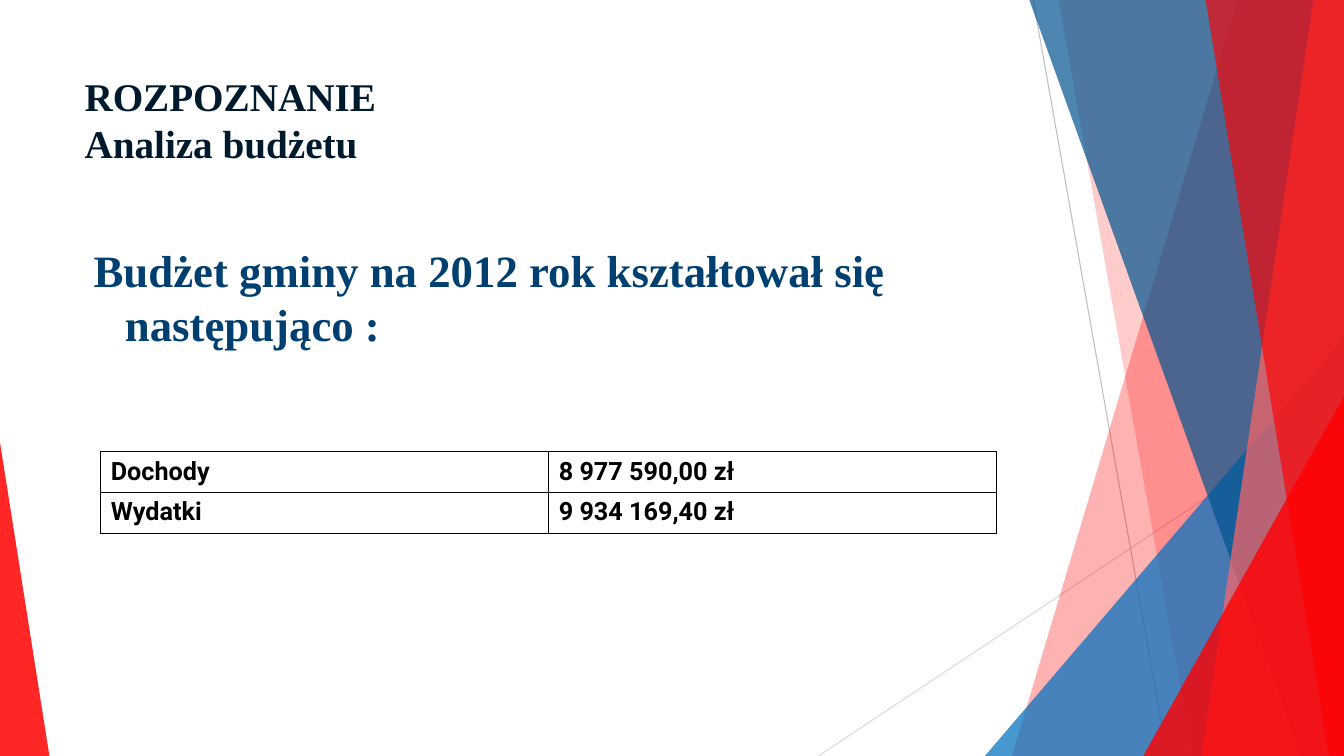
"""Build the municipal budget analysis slide."""
from lxml import etree
from pptx import Presentation
from pptx.dml.color import RGBColor
from pptx.enum.shapes import MSO_CONNECTOR, MSO_SHAPE
from pptx.enum.text import MSO_ANCHOR
from pptx.oxml.ns import qn
from pptx.util import Pt

STRAIGHT = MSO_CONNECTOR.STRAIGHT
TRIANGLE = MSO_SHAPE.ISOSCELES_TRIANGLE
TOP = MSO_ANCHOR.TOP
WIDTH, HEIGHT = 960, 540
BLEED = -0.6
RED, BLACK = "FF0000", "000000"
SERIF, SANS = "Times New Roman", "Roboto"


def color(code):
    return RGBColor.from_string(code)


class BudgetSlide:
    def __init__(self, slide):
        self.slide = slide
        self.shapes = slide.shapes

    def style_text(self, frame, text, size, face, code):
        paragraph = frame.paragraphs[0]
        paragraph.text = text
        look = {"size": Pt(size), "name": face, "bold": True}
        for run in paragraph.runs:
            for key, value in look.items():
                setattr(run.font, key, value)
            run.font.color.rgb = color(code)
        return paragraph

    def paint(self, shape, code, opacity):
        shape.shadow.inherit = False
        shape.fill.solid()
        shape.fill.fore_color.rgb = color(code)
        shape.line.fill.background()
        tint = shape.fill._xPr.find(qn("a:solidFill"))[0]
        etree.SubElement(tint, qn("a:alpha"), val=str(opacity * 1000))

    def hairline(self, start, end, code):
        line = self.shapes.add_connector(STRAIGHT, *map(Pt, start + end))
        line.line.color.rgb = color(code)
        line.line.width = Pt(0.75)
        etree.SubElement(line._element.spPr, qn("a:effectLst"))

    def band(self, top_x, bottom_x, code, opacity):
        outline = self.shapes.build_freeform(Pt(top_x), Pt(BLEED))
        corners = [(WIDTH, BLEED), (WIDTH, HEIGHT), (bottom_x, HEIGHT)]
        outline.add_line_segments([(Pt(x), Pt(y)) for x, y in corners])
        self.paint(outline.convert_to_shape(), code, opacity)

    def corner(self, left, width, height, apex, code, opacity):
        box = left, HEIGHT - height, width, height
        wedge = self.shapes.add_shape(TRIANGLE, *map(Pt, box))
        wedge.adjustments[0] = apex
        self.paint(wedge, code, opacity)

    def text(self, box, words, size, code):
        frame = self.shapes.add_textbox(*map(Pt, box)).text_frame
        frame.word_wrap = True
        frame.vertical_anchor = TOP
        return self.style_text(frame, words, size, SERIF, code)

    def border(self, cell):
        properties = cell._tc.get_or_add_tcPr()
        for index, side in enumerate(("a:lnL", "a:lnR", "a:lnT", "a:lnB")):
            edge = etree.Element(qn(side), w=str(Pt(1)))
            fill = etree.SubElement(edge, qn("a:solidFill"))
            etree.SubElement(fill, qn("a:srgbClr"), val=BLACK)
            properties.insert(index, edge)

    def table(self, box, rows):
        size = len(rows), len(rows[0])
        grid = self.shapes.add_table(*size, *map(Pt, box)).table
        grid.first_row = grid.horz_banding = False
        for r, row in enumerate(rows):
            for c, words in enumerate(row):
                cell = grid.cell(r, c)
                cell.fill.background()
                self.style_text(cell.text_frame, words, 18, SANS, BLACK)
                self.border(cell)


def main():
    deck = Presentation()
    deck.slide_width, deck.slide_height = Pt(WIDTH), Pt(HEIGHT)
    budget = BudgetSlide(deck.slides.add_slide(deck.slide_layouts[6]))

    budget.hairline((738, 0), (833.8, HEIGHT), "BFBFBF")
    budget.hairline((WIDTH, 290.2), (584.6, HEIGHT), "D9D9D9")
    budget.band(884.2, 722.9, RED, 30)
    budget.band(756, 851.8, RED, 20)
    budget.corner(703.5, 256.5, 300, 1, "0070C0", 72)
    budget.band(735.1, 929.5, "005490", 70)
    budget.band(938.2, 858.2, "FF6666", 70)
    budget.band(861.1, 949, RED, 65)
    budget.corner(816.6, 143.4, 257, 1, RED, 80)
    budget.corner(0, 35.3, 224, 0, RED, 85)

    budget.text((53.3, 48, 677, 104), "ROZPOZNANIE\vAnaliza budżetu", 28, "001A2D")
    lead = budget.text((53.3, 170, 677, 305),
                       "Budżet gminy na 2012 rok kształtował się następująco :",
                       32, "004070")
    lead.space_before = Pt(6)
    indent = lead._p.get_or_add_pPr()
    indent.set("marL", str(Pt(28.8)))
    indent.set("indent", str(Pt(-22.3)))

    budget.table((72, 322.6, 640, 58.4),
                 [("Dochody", "8 977 590,00 zł"), ("Wydatki", "9 934 169,40 zł")])
    deck.save("out.pptx")


if __name__ == "__main__":
    main()
